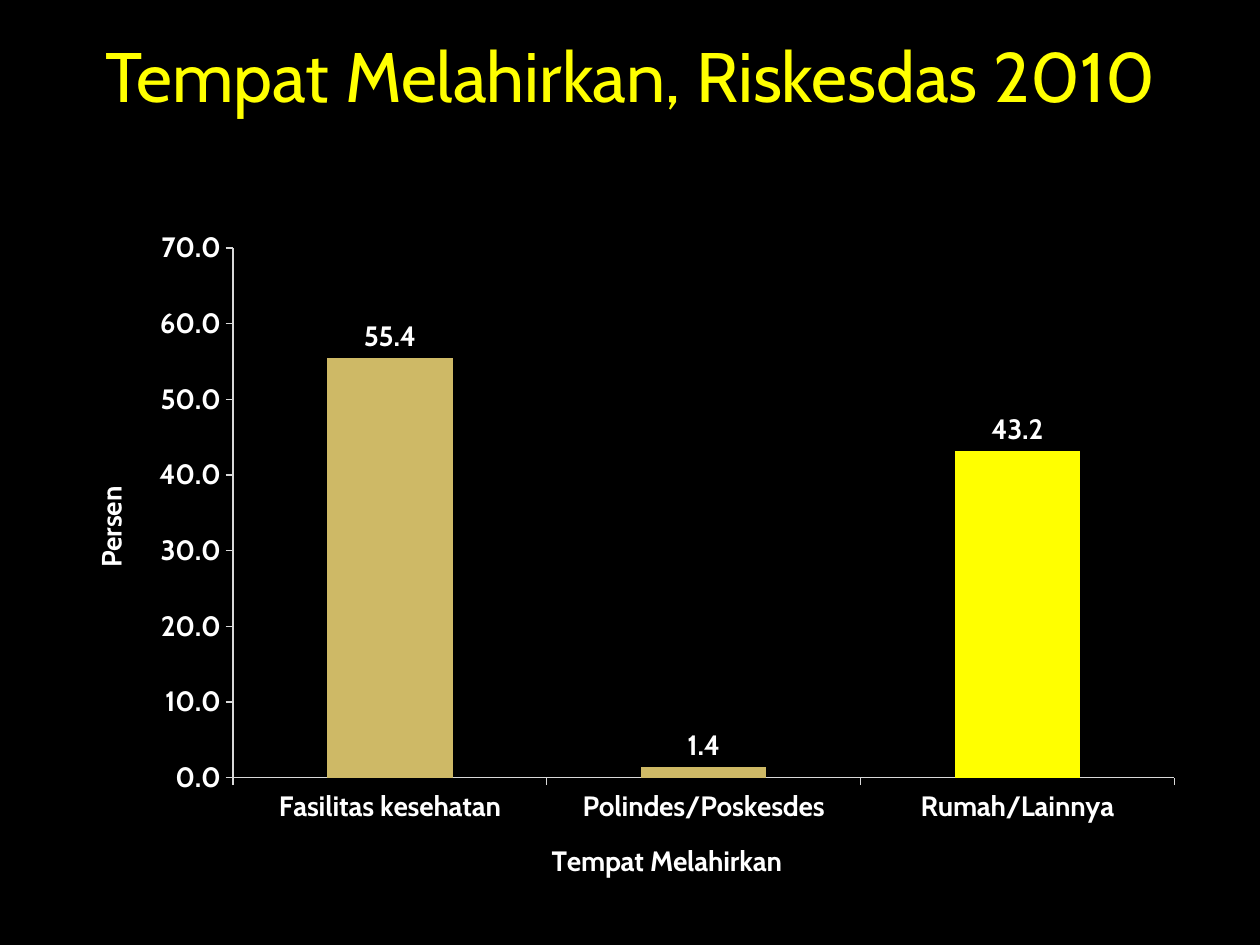
import pptx
import pptx.chart.data
import pptx.dml.color
import pptx.enum.chart
import pptx.enum.text
import pptx.oxml
import pptx.oxml.ns
import pptx.util
from pptx.util import Inches, Pt

TITLE = "Tempat Melahirkan, Riskesdas 2010"
PLACES = [("Fasilitas kesehatan", 55.4), ("Polindes/Poskesdes", 1.4), ("Rumah/Lainnya", 43.2)]
HIGHLIGHT = 2
CATEGORY_TITLE, VALUE_TITLE = "Tempat Melahirkan", "Persen"
COLORS = {"background": "000000", "text": "FFFFFF", "bar": "CEB966",
          "highlight": "FFFF00", "axis": "D9D9D9"}
FONT = "Cabin"
PLOT_LAYOUT = {"x": 0.15, "y": 0.04, "w": 0.83, "h": 0.77}


def rgb(name):
    return pptx.dml.color.RGBColor.from_string(COLORS[name])


def paint(fill, color):
    fill.solid()
    fill.fore_color.rgb = rgb(color)


def style_font(font, size, color, bold):
    font.name, font.size, font.bold = FONT, Pt(size), bold
    font.color.rgb = rgb(color)


def style_axis(axis, title):
    axis.has_major_gridlines = False
    axis.major_tick_mark = pptx.enum.chart.XL_TICK_MARK.OUTSIDE
    axis.minor_tick_mark = pptx.enum.chart.XL_TICK_MARK.NONE
    axis.format.line.color.rgb = rgb("axis")
    axis.format.line.width = Pt(0.75)
    tf = axis.axis_title.text_frame
    tf.text = title
    style_font(tf.paragraphs[0].runs[0].font, 16, "text", True)


def place_plot(chart):
    """Fix the inner plot area as fractions of the chart."""
    plot_area = chart.element.chart.plotArea
    for old in plot_area.findall(pptx.oxml.ns.qn("c:layout")):
        plot_area.remove(old)
    modes = "".join(f'<c:{k}Mode val="edge"/>' for k in "xy")
    sizes = "".join(f'<c:{k} val="{v}"/>' for k, v in PLOT_LAYOUT.items())
    plot_area.insert(0, pptx.oxml.parse_xml(
        f'<c:layout {pptx.oxml.ns.nsdecls("c")}><c:manualLayout>'
        f'<c:layoutTarget val="inner"/>{modes}{sizes}</c:manualLayout></c:layout>'))


def add_title(s):
    sp = s.shapes.title
    sp.left, sp.top, sp.width, sp.height = map(Inches, (0.5, -0.03, 9, 1.25))
    tf = sp.text_frame
    tf.text = TITLE
    tf.vertical_anchor = pptx.enum.text.MSO_ANCHOR.MIDDLE
    p = tf.paragraphs[0]
    p.alignment = pptx.enum.text.PP_ALIGN.CENTER
    style_font(p.runs[0].font, 40, "highlight", False)


def add_birthplace_chart(s):
    data = pptx.chart.data.CategoryChartData(number_format="0.0")
    data.categories = [place for place, _ in PLACES]
    data.add_series("Series 1", [percent for _, percent in PLACES])
    chart = s.shapes.add_chart(
        pptx.enum.chart.XL_CHART_TYPE.COLUMN_CLUSTERED,
        Inches(0.5), Inches(1.75), Inches(9), Inches(5.46), data).chart
    chart.has_legend = chart.has_title = False
    style_font(chart.font, 16, "text", True)
    style_axis(chart.category_axis, CATEGORY_TITLE)
    axis = chart.value_axis
    style_axis(axis, VALUE_TITLE)
    axis.minimum_scale, axis.maximum_scale, axis.major_unit = 0, 70, 10
    axis.tick_labels.number_format = "0.0"
    axis.tick_labels.number_format_is_linked = False

    plot = chart.plots[0]
    plot.gap_width = 150
    plot.vary_by_categories = False
    series = plot.series[0]
    paint(series.format.fill, "bar")
    paint(series.points[HIGHLIGHT].format.fill, "highlight")
    labels = series.data_labels
    labels.show_value = True
    labels.number_format = "0.0"
    labels.number_format_is_linked = False
    labels.position = pptx.enum.chart.XL_LABEL_POSITION.OUTSIDE_END
    style_font(labels.font, 16, "text", True)
    place_plot(chart)


def main():
    prs = pptx.Presentation()
    prs.slide_width, prs.slide_height = Inches(10), Inches(7.5)
    s = prs.slides.add_slide(prs.slide_layouts[5])
    paint(s.background.fill, "background")
    add_title(s)
    add_birthplace_chart(s)
    prs.save("out.pptx")


if __name__ == "__main__":
    main()
